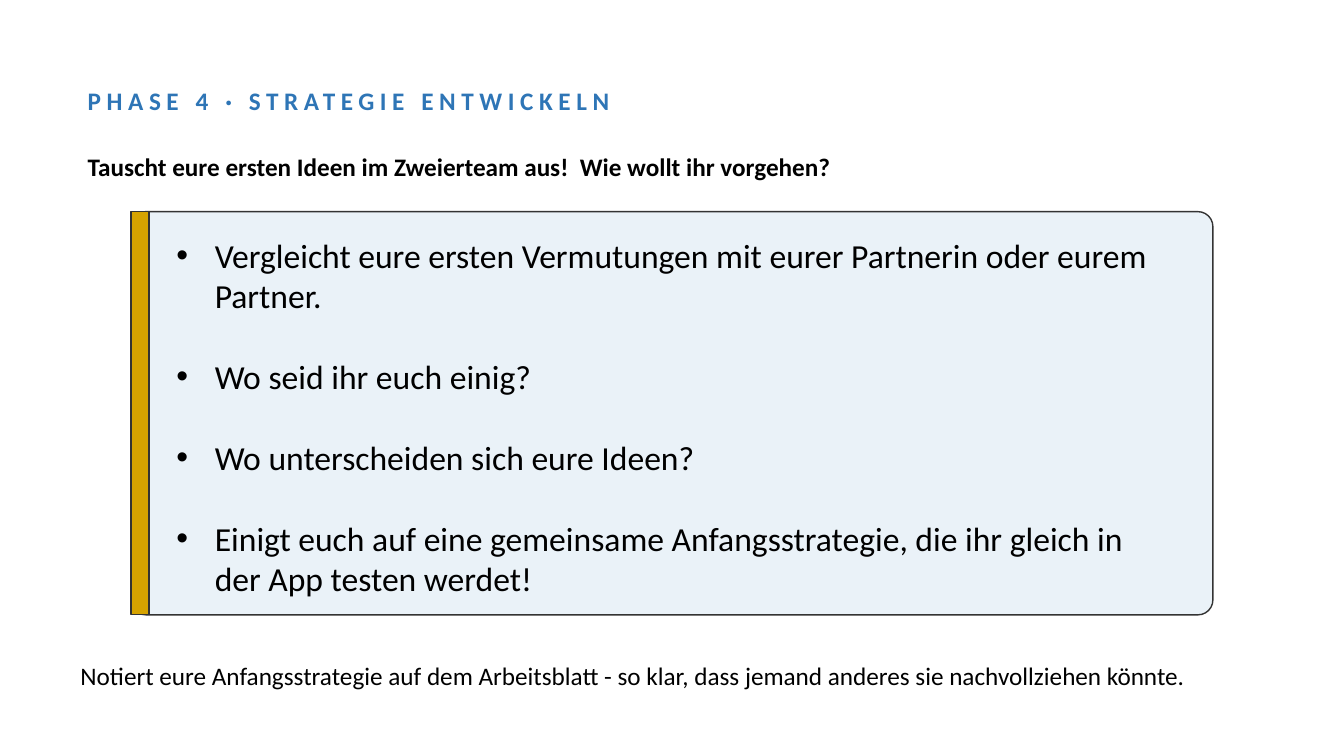
from pptx import Presentation
from pptx.dml.color import RGBColor
from pptx.enum.shapes import MSO_SHAPE as Shape
from pptx.enum.text import MSO_ANCHOR as Anchor, MSO_AUTO_SIZE as AutoSize, PP_ALIGN as Align
from pptx.util import Inches, Pt

FONT = "Calibri"
BLACK, BLUE, PALE, GOLD, DARK = "000000", "2E75B6", "EAF2F8", "D6A300", "333333"
STEPS = [
    "Vergleicht eure ersten Vermutungen mit eurer Partnerin oder eurem Partner.",
    "Wo seid ihr euch einig?",
    "Wo unterscheiden sich eure Ideen?",
    "Einigt euch auf eine gemeinsame Anfangsstrategie, die ihr gleich in der App testen werdet!",
]


def color(value):
    return RGBColor.from_string(value)


def place(shape, box):
    shape.left, shape.top, shape.width, shape.height = map(Inches, box)


def write(shape, lines, size=18, ink=BLACK, bold=False, tracking=0, gap=0, indent=0):
    """Fill a text shape; tracking and gap are in points, a bullet indent in inches."""
    frame = shape.text_frame
    frame.word_wrap = True
    frame.auto_size = AutoSize.NONE
    frame.vertical_anchor = Anchor.MIDDLE
    for index, line in enumerate(lines):
        para = frame.add_paragraph() if index else frame.paragraphs[0]
        para.alignment = Align.LEFT
        para.line_spacing = 1.0
        para.space_before = Pt(gap if index else 0)
        if indent:
            properties = para._p.get_or_add_pPr()
            properties.set("marL", str(Inches(indent)))
            properties.set("indent", str(-Inches(indent)))
        span = para.add_run()
        span.text = line
        span.font.name, span.font.size, span.font.bold = FONT, Pt(size), bold
        span.font.color.rgb = color(ink)
        if tracking:
            span.font._element.set("spc", str(tracking * 100))


def add_text(page, box, line, **style):
    write(page.shapes.add_textbox(*map(Inches, box)), [line], **style)


def add_panel(page, kind, box, fill):
    panel = page.shapes.add_shape(kind, *map(Inches, box))
    panel.shadow.inherit = False
    panel.fill.solid()
    panel.fill.fore_color.rgb = color(fill)
    panel.line.color.rgb = color(DARK)
    panel.line.width = Pt(1)
    return panel


def add_heading(page, left, top):
    place(page.shapes.title, (left, top, 8, 0.4))
    write(page.shapes.title, ["PHASE 4 · STRATEGIE ENTWICKELN"], ink=BLUE, bold=True, tracking=4)
    add_text(page, (left, top + 0.55, 10, 0.6),
             "Tauscht eure ersten Ideen im Zweierteam aus!  Wie wollt ihr vorgehen?", bold=True)


def add_step_card(page, box):
    left, top, width, height = box
    card = add_panel(page, Shape.ROUNDED_RECTANGLE, box, PALE)
    card.adjustments[0] = 0.037
    accent = add_panel(page, Shape.RECTANGLE, (left, top, 0.18, height), GOLD)
    body = page.placeholders[1]
    for panel in (card, accent):
        body._element.addprevious(panel._element)
    place(body, (left + 0.35, top + 0.21, width - 0.75, height - 0.35))
    write(body, STEPS, size=24, gap=29, indent=0.38)


def main():
    deck = Presentation()
    deck.slide_width, deck.slide_height = Inches(13.33), Inches(7.5)
    page = deck.slides.add_slide(deck.slide_layouts[1])
    add_heading(page, 0.77, 0.8)
    add_step_card(page, (1.3, 2.1, 10.73, 4))
    add_text(page, (0.7, 6.5, 11.93, 0.4),
             "Notiert eure Anfangsstrategie auf dem Arbeitsblatt - so klar, "
             "dass jemand anderes sie nachvollziehen könnte.")
    deck.save("out.pptx")


if __name__ == "__main__":
    main()
